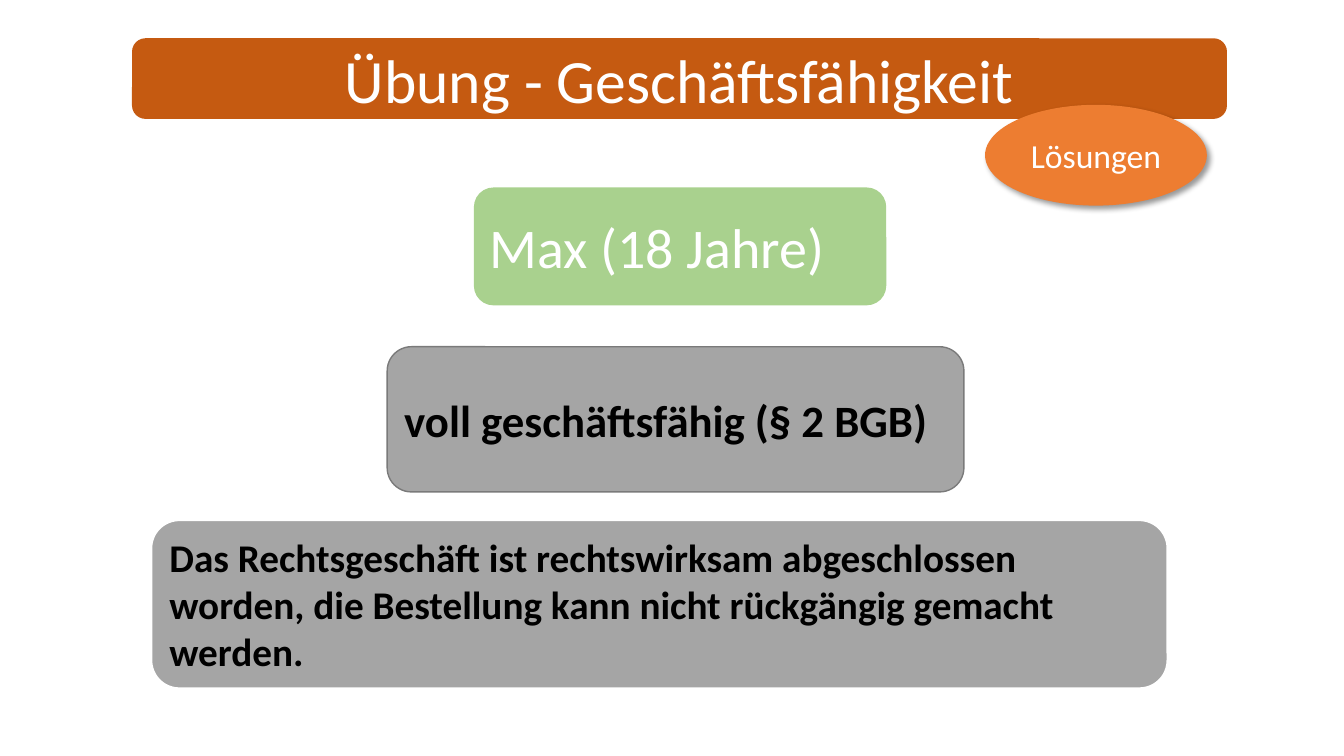
from dataclasses import dataclass
from typing import Optional

from pptx import Presentation
from pptx.dml.color import RGBColor
from pptx.enum.shapes import MSO_SHAPE as Kind
from pptx.enum.text import MSO_ANCHOR as Anchor, MSO_AUTO_SIZE as Fit, PP_ALIGN as Align
from pptx.oxml import parse_xml
from pptx.oxml.ns import nsdecls
from pptx.util import Inches, Pt

RUST = RGBColor(0xC5, 0x5A, 0x11)
ORANGE = RGBColor(0xED, 0x7D, 0x31)
GREEN = RGBColor(0xA9, 0xD1, 0x8E)
GREY = RGBColor(0xA5, 0xA5, 0xA5)
EDGE = RGBColor(0x7A, 0x7A, 0x7A)
WHITE = RGBColor(0xFF, 0xFF, 0xFF)
BLACK = RGBColor(0x00, 0x00, 0x00)

FONT = "Calibri"
TITLE = "Übung - Geschäftsfähigkeit"
BANNER = (1.31, 0.38, 10.86, 0.8)


@dataclass
class Box:
    at: tuple[float, float, float, float]
    fill: RGBColor
    text: str = ""
    size: int = 0
    ink: RGBColor = WHITE
    bold: bool = False
    align: Align = Align.LEFT
    kind: Kind = Kind.ROUNDED_RECTANGLE
    line: Optional[RGBColor] = None
    width: float = 1
    shadow: bool = False


BOXES = [
    Box((4.7, 1.86, 4.09, 1.17), GREEN, "Max (18 Jahre)", 40),
    Box((3.84, 3.44, 5.72, 1.44), GREY, "voll geschäftsfähig (§ 2 BGB)", 32,
        BLACK, True, line=EDGE),
    Box((9.77, 1.04, 2.2, 1), ORANGE, "Lösungen", 24, align=Align.CENTER,
        kind=Kind.OVAL, shadow=True),
    Box((1.5, 5.16, 10.08, 1.67), GREY,
        "Das Rechtsgeschäft ist rechtswirksam abgeschlossen worden, "
        "die Bestellung kann nicht rückgängig gemacht werden.", 28,
        BLACK, True, line=WHITE, width=1.5),
]


def write(shape, text: str, size: int, ink: RGBColor, bold: bool, align: Align) -> None:
    frame = shape.text_frame
    frame.text = text
    frame.word_wrap = True
    frame.auto_size = Fit.NONE
    frame.vertical_anchor = Anchor.MIDDLE
    par = frame.paragraphs[0]
    par.alignment = align
    font = par.font
    font.name, font.size, font.bold = FONT, Pt(size), bold
    font.color.rgb = ink


def cast(shape) -> None:
    """Give the shape a soft shadow to the lower right."""
    shape._element.spPr.append(parse_xml(
        f'<a:effectLst {nsdecls("a")}>'
        f'<a:outerShdw blurRad="{Pt(4)}" dist="{Pt(3)}" dir="2700000" '
        'algn="tl" rotWithShape="0"><a:srgbClr val="000000">'
        '<a:alpha val="40000"/></a:srgbClr></a:outerShdw></a:effectLst>'))


def draw(slide, box: Box) -> None:
    shape = slide.shapes.add_shape(box.kind, *map(Inches, box.at))
    shape.fill.solid()
    shape.fill.fore_color.rgb = box.fill
    if box.line is None:
        shape.line.fill.background()
    else:
        shape.line.color.rgb = box.line
        shape.line.width = Pt(box.width)
    if box.shadow:
        cast(shape)
    else:
        shape.shadow.inherit = False
    if box.text:
        write(shape, box.text, box.size, box.ink, box.bold, box.align)


def main() -> None:
    deck = Presentation()
    deck.slide_width, deck.slide_height = Inches(13.33), Inches(7.5)
    slide = deck.slides.add_slide(deck.slide_layouts[5])

    # Title on its banner, lifted above it
    draw(slide, Box(BANNER, RUST))
    title = slide.shapes.title
    title.left, title.top, title.width, title.height = map(Inches, BANNER)
    write(title, TITLE, 44, WHITE, False, Align.CENTER)
    slide.shapes._spTree.append(title._element)

    # Case, legal status, badge and outcome
    for box in BOXES:
        draw(slide, box)

    deck.save("out.pptx")


if __name__ == "__main__":
    main()
